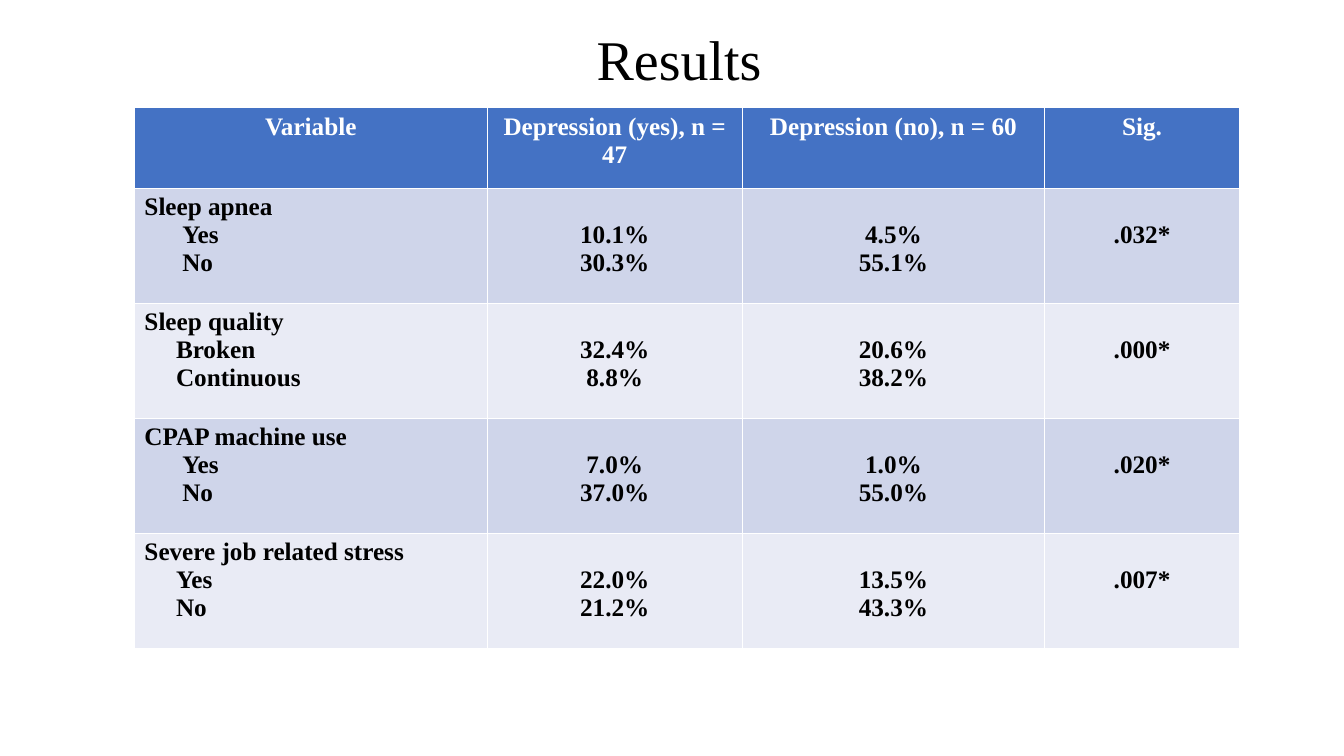
from pptx import Presentation
from pptx.dml.color import RGBColor
from pptx.enum.text import MSO_ANCHOR, PP_ALIGN
from pptx.util import Pt

HEADINGS = ["Variable", "Depression (yes), n = 47", "Depression (no), n = 60", "Sig."]
VARIABLES = [
    (27, ["Sleep apnea", "Yes", "No"], ["10.1%", "30.3%"], ["4.5%", "55.1%"], [".032*"]),
    (22.5, ["Sleep quality", "Broken", "Continuous"], ["32.4%", "8.8%"], ["20.6%", "38.2%"], [".000*"]),
    (27, ["CPAP machine use", "Yes", "No"], ["7.0%", "37.0%"], ["1.0%", "55.0%"], [".020*"]),
    (22.5, ["Severe job related stress", "Yes", "No"], ["22.0%", "21.2%"], ["13.5%", "43.3%"], [".007*"]),
]
COLUMN_WIDTHS = [252, 182.2, 216, 139.2]
HEADER_HEIGHT = 57.6
BANDS = ["CFD5EA", "E9EBF5"]
LINE_HEIGHT = 20


def color(value):
    return RGBColor.from_string(value)


def apply_format(target, values):
    for name, value in values.items():
        setattr(target, name, value)


def write_lines(frame, lines, size, ink, bold, align):
    for index, line in enumerate(lines):
        para = frame.paragraphs[0] if index == 0 else frame.add_paragraph()
        para.alignment = align
        span = para.add_run()
        span.text = line
        apply_format(span.font, {"name": "Times New Roman", "size": Pt(size), "bold": bold})
        span.font.color.rgb = color(ink)


def fill_cell(cell, lines, fill, ink="000000", align=PP_ALIGN.CENTER):
    cell.fill.solid()
    cell.fill.fore_color.rgb = color(fill)
    write_lines(cell.text_frame, lines, 18, ink, True, align)


def add_title(page, box):
    title = page.shapes.title
    apply_format(title, dict(zip(["left", "top", "width", "height"], map(Pt, box))))
    frame = title.text_frame
    apply_format(frame, {"word_wrap": True, "vertical_anchor": MSO_ANCHOR.MIDDLE})
    write_lines(frame, ["Results"], 40, "000000", False, PP_ALIGN.LEFT)
    frame.paragraphs[0].line_spacing = 0.9


def add_results_table(page, box):
    row_count = len(VARIABLES) + 1
    table = page.shapes.add_table(row_count, len(HEADINGS), *map(Pt, box)).table
    for column, width in zip(table.columns, COLUMN_WIDTHS):
        column.width = Pt(width)
    for row in table.rows:
        row.height = Pt((box[3] - HEADER_HEIGHT) / len(VARIABLES))
    table.rows[0].height = Pt(HEADER_HEIGHT)

    for column, heading in enumerate(HEADINGS):
        fill_cell(table.cell(0, column), [heading], "4472C4", "FFFFFF")

    for row, (indent, labels, *results) in enumerate(VARIABLES, 1):
        band = BANDS[(row - 1) % 2]
        label_cell = table.cell(row, 0)
        fill_cell(label_cell, labels, band, align=PP_ALIGN.LEFT)
        for para in label_cell.text_frame.paragraphs[1:]:
            para._p.get_or_add_pPr().set("marL", str(Pt(indent)))
        for column, values in enumerate(results, 1):
            cell = table.cell(row, column)
            fill_cell(cell, values, band)
            cell.margin_top = Pt(3.6 + LINE_HEIGHT)


def main():
    deck = Presentation()
    apply_format(deck, {"slide_width": Pt(960), "slide_height": Pt(540)})
    page = deck.slides.add_slide(deck.slide_layouts[5])
    add_title(page, (419, 12.2, 195, 64.8))
    add_results_table(page, (96, 77, sum(COLUMN_WIDTHS), 386))
    deck.save("out.pptx")


if __name__ == "__main__":
    main()
